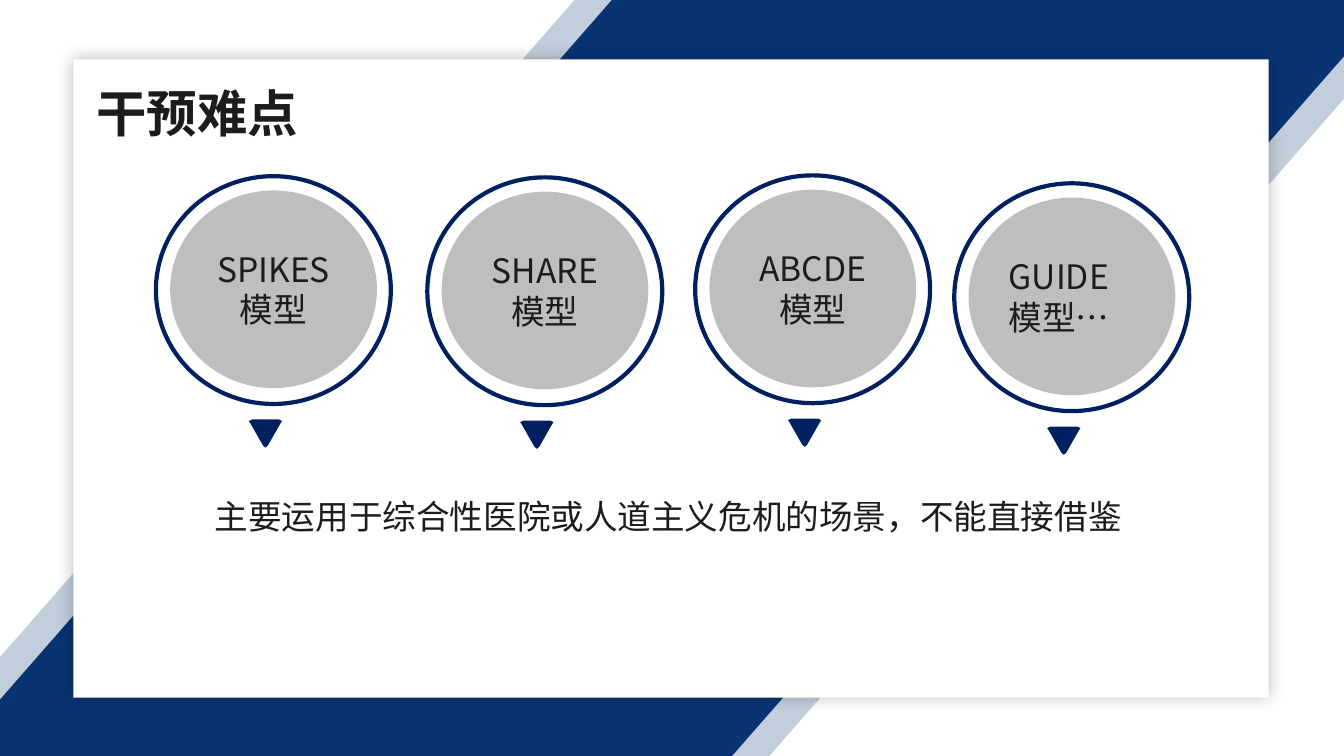
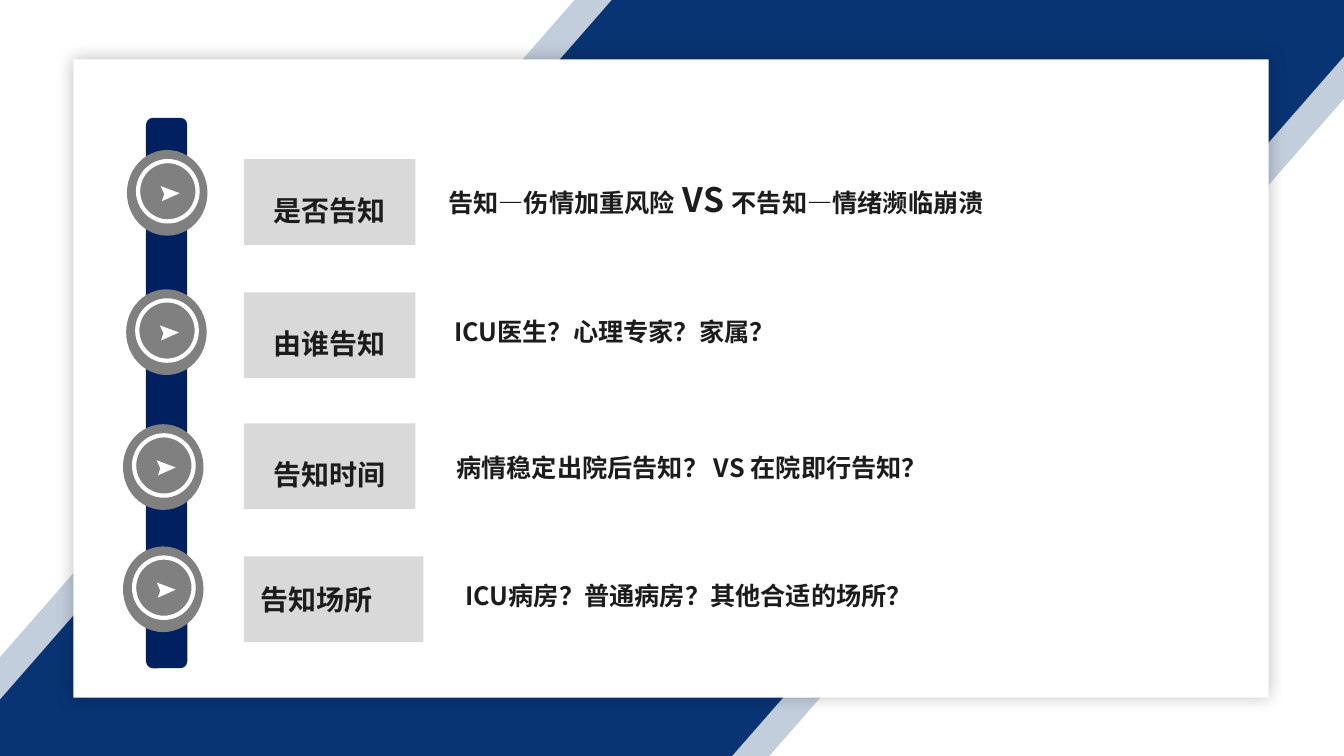
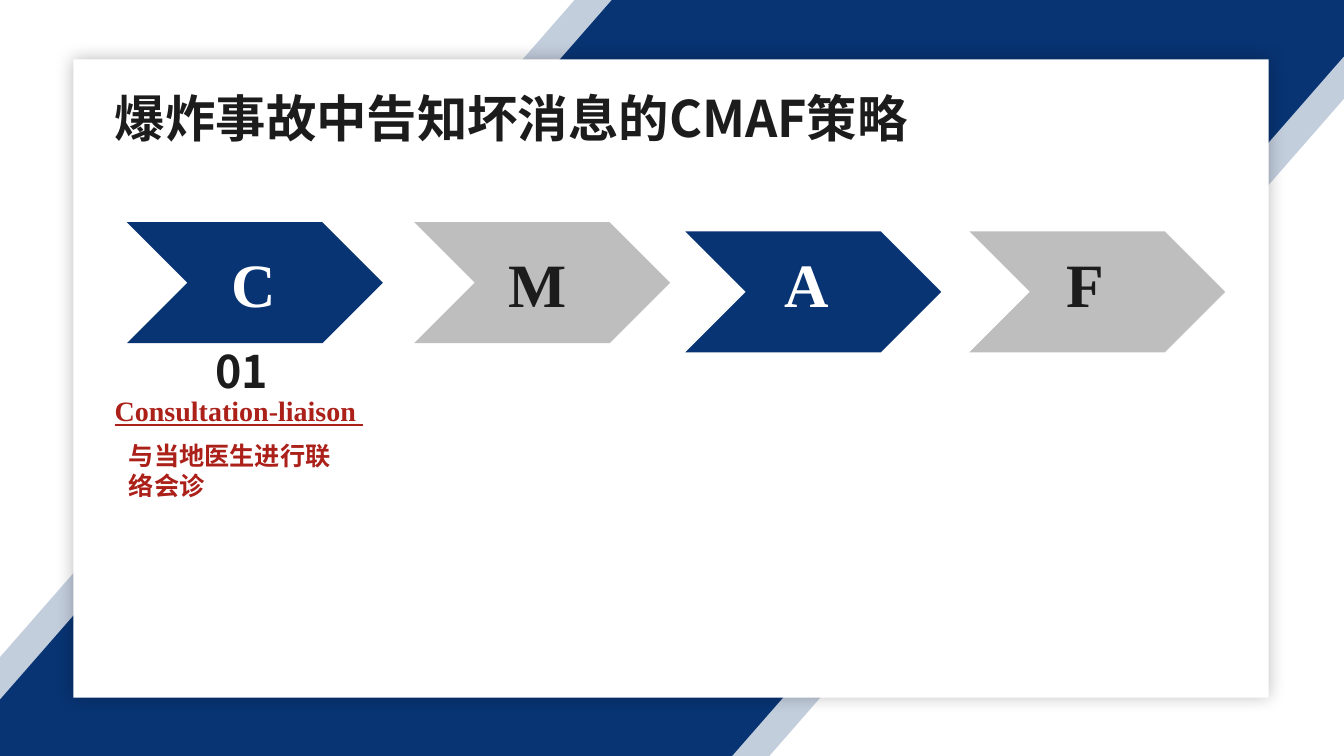
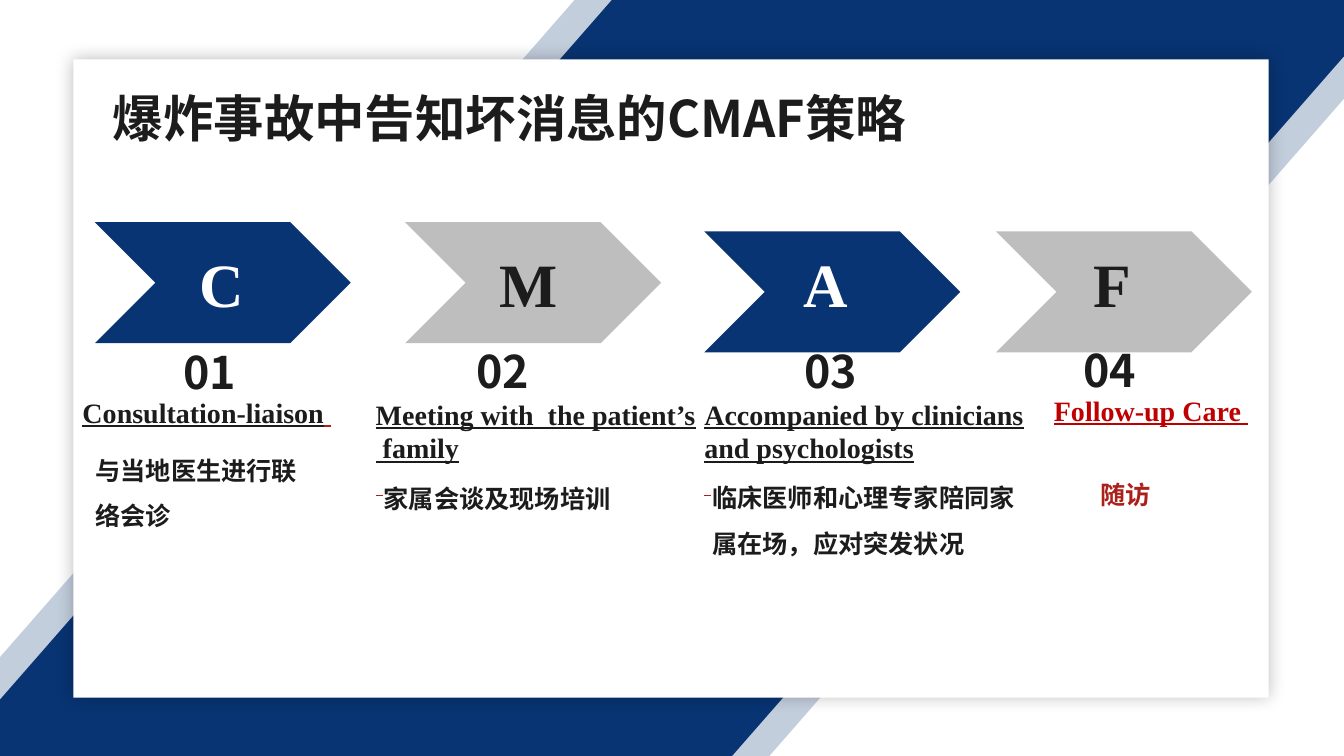
from lxml.etree import SubElement
from pptx import Presentation
from pptx.dml.color import RGBColor
from pptx.enum.shapes import MSO_SHAPE
from pptx.enum.text import MSO_ANCHOR, MSO_AUTO_SIZE, PP_ALIGN
from pptx.oxml.ns import qn
from pptx.util import Cm, Pt

WIDTH, HEIGHT = 33.87, 19.05
BLUE, NAVY, SILVER, GRAY, PALE = "083473", "002060", "BEBEBE", "808080", "D9D9D9"
WHITE, INK, RED, BRIGHT_RED = "FFFFFF", "1C1C1C", "AB2019", "C00000"

PLAIN = {"name": "Noto Sans CJK SC", "size": Pt(24), "color": INK}
BOLD = PLAIN | {"bold": True}
TITLE = BOLD | {"size": Pt(36)}
LABEL = BOLD | {"size": Pt(20)}
BODY = BOLD | {"size": Pt(18)}
NUMBER = BOLD | {"size": Pt(32)}
LETTER = BOLD | {"name": "Times New Roman", "size": Pt(44)}
HEADING = LETTER | {"size": Pt(20), "underline": True}


def add(slide, kind, left, top, width=0, height=0, fill=None, line=None):
    """Add a preset shape, a polygon (kind is a list of points) or a text box (kind is None), in cm."""
    box = [Cm(value) for value in (left, top, width, height)]
    if kind is None:
        return slide.shapes.add_textbox(*box)
    if isinstance(kind, list):
        points = [(Cm(left + x), Cm(top + y)) for x, y in kind]
        builder = slide.shapes.build_freeform(*points[0], scale=1.0)
        builder.add_line_segments(points[1:], close=True)
        shape = builder.convert_to_shape()
    else:
        shape = slide.shapes.add_shape(kind, *box)
    shape.shadow.inherit = False
    for target, color in ((shape.fill, fill), (shape.line.fill, line)):
        if color:
            target.solid()
            target.fore_color.rgb = RGBColor.from_string(color)
        else:
            target.background()
    if line:
        shape.line.width = Pt(3)
    return shape


def write(shape, runs, style, anchor=MSO_ANCHOR.TOP, **paragraph_format):
    """Write a string, or (text, style changes) pairs; a newline is a line break."""
    frame = shape.text_frame
    frame.word_wrap = True
    frame.auto_size = MSO_AUTO_SIZE.NONE
    frame.vertical_anchor = anchor
    paragraph = frame.paragraphs[0]
    for name, value in ({"alignment": PP_ALIGN.LEFT} | paragraph_format).items():
        setattr(paragraph, name, value)
    for text, changes in [(runs, {})] if isinstance(runs, str) else runs:
        for index, line in enumerate(text.split("\n")):
            if index:
                paragraph.add_line_break()
            if not line:
                continue
            run = paragraph.add_run()
            run.text = line
            for name, value in (style | changes).items():
                if name == "color":
                    run.font.color.rgb = RGBColor.from_string(value)
                else:
                    setattr(run.font, name, value)
            SubElement(run._r.get_or_add_rPr(), qn("a:ea"), typeface=style["name"])


presentation = Presentation()
presentation.slide_width, presentation.slide_height = Cm(WIDTH), Cm(HEIGHT)

# Slides and titles: text, left, top, width
titles = [
    ("干预难点", 2.18, 1.93, 7.06),
    None,
    ("爆炸事故中告知坏消息的CMAF策略", 2.64, 2.08, 21.44),
    ("爆炸事故中告知坏消息的CMAF策略", 2.59, 2.08, 20.9),
]
slides = []
for title in titles:
    slide = presentation.slides.add_slide(presentation.slide_layouts[5 if title else 6])
    slides.append(slide)
    if title:
        text, left, top, width = title
        shape = slide.shapes.title
        shape.left, shape.top, shape.width, shape.height = Cm(left), Cm(top), Cm(width), Cm(1.8)
        write(shape, text, TITLE)
models_slide, questions_slide, first_step_slide, all_steps_slide = slides

# Diagonal bands and white panel, moved to the master
backdrop = []
for top_x, side_y in ((14.48, 2.49), (15.42, 1.42)):
    outline = [(top_x, 0), (WIDTH, 0), (WIDTH, side_y),
               (WIDTH - top_x, HEIGHT), (0, HEIGHT), (0, HEIGHT - side_y)]
    backdrop.append(add(models_slide, outline, 0, 0, fill=BLUE))
pale_color = next(backdrop[0].element.spPr.iter(qn("a:srgbClr")))
SubElement(pale_color, qn("a:alpha"), val="24000")
panel = add(models_slide, MSO_SHAPE.RECTANGLE, 1.85, 1.5, 30.12, 16.08, WHITE)
effects = panel.element.spPr.find(qn("a:effectLst"))
shadow = SubElement(effects, qn("a:outerShdw"), blurRad=str(Pt(12)), dist="0", dir="0",
                    algn="ctr", rotWithShape="0")
shadow_color = SubElement(shadow, qn("a:srgbClr"), val="000000")
SubElement(shadow_color, qn("a:alpha"), val="25000")
for index, shape in enumerate(backdrop + [panel]):
    shape.element.nvSpPr.cNvPr.set("id", str(100 + index))
    presentation.slide_master.shapes.element.insert(2 + index, shape.element)

# Slide 1: four models
pointer = [(0.08, 0), (0.76, 0), (0.84, 0.04), (0.81, 0.08), (0.48, 0.66),
           (0.42, 0.71), (0.36, 0.66), (0.03, 0.08), (0, 0.04)]
models = [
    ("SPIKES模型", 4.29, 4.8, PP_ALIGN.CENTER),
    ("SHARE\n模型", 11.13, 4.83, PP_ALIGN.CENTER),
    ("ABCDE\n模型", 17.88, 4.78, PP_ALIGN.CENTER),
    ("GUIDE\n模型…", 24.41, 4.98, PP_ALIGN.LEFT),
]
for text, left, top, alignment in models:
    disc = add(models_slide, MSO_SHAPE.OVAL, left, top, 5.21, 4.98, SILVER)
    write(disc, text, PLAIN, MSO_ANCHOR.MIDDLE, alignment=alignment)
    add(models_slide, MSO_SHAPE.OVAL, left - 0.36, top - 0.36, 5.92, 5.74, line=NAVY)
    add(models_slide, pointer, left + 1.98, top + 5.77, fill=NAVY)
summary = add(models_slide, None, 5.16, 12.37, 23.6, 1.27)
write(summary, "主要运用于综合性医院或人道主义危机的场景，不能直接借鉴", PLAIN)

# Slide 2: four questions along a bar
add(questions_slide, MSO_SHAPE.ROUNDED_RECTANGLE, 3.68, 2.97, 1.04, 13.87, NAVY)
arrow = [(0.03, 0.38), (0.48, 0.18), (0, 0), (0.09, 0.2)]
centered = {"alignment": PP_ALIGN.CENTER, "line_spacing": 1.5}
# disc left, top; label, top, width, format; answer, left, top, width
questions = [
    (3.2, 3.78, "是否告知", 4.01, 4.32, centered,
     [("告知—伤情加重风险", {}), (" VS ", {"size": Pt(24)}), ("不告知—情绪濒临崩溃", {})],
     11.05, 4.39, 14.05),
    (3.18, 7.29, "由谁告知", 7.37, 4.32, centered,
     "ICU医生？心理专家？家属？", 11.2, 7.85, 9),
    (3.1, 10.69, "告知时间", 10.67, 4.32, centered,
     "病情稳定出院后告知？ VS 在院即行告知？", 11.25, 11.28, 13),
    (3.1, 13.77, "告知场所", 14.02, 4.52, {},
     "ICU病房？普通病房？其他合适的场所？", 11.48, 14.5, 12.2),
]
for (left, top, label, label_top, label_width, label_format,
     answer, answer_left, answer_top, answer_width) in questions:
    add(questions_slide, MSO_SHAPE.OVAL, left, top, 2.03, 2.16, GRAY)
    add(questions_slide, MSO_SHAPE.OVAL, left + 0.28, top + 0.28, 1.5, 1.52, line=WHITE)
    add(questions_slide, arrow, left + 0.85, top + 0.91, fill=WHITE)
    box = add(questions_slide, MSO_SHAPE.RECTANGLE, 6.15, label_top, label_width, 2.16, PALE)
    write(box, label, LABEL, MSO_ANCHOR.MIDDLE, **label_format)
    if not label_format:
        box.text_frame.margin_left = Cm(0.42)
    write(add(questions_slide, None, answer_left, answer_top, answer_width, 1.1), answer, BODY)

# Slides 3 and 4: CMAF chevrons
# letter, chevron top, letter offset, chevron colour, letter colour
steps = [
    ("C", 5.6, 2.39, BLUE, WHITE),
    ("M", 5.6, 2.13, SILVER, INK),
    ("A", 5.83, 2.24, BLUE, WHITE),
    ("F", 5.83, 2.21, SILVER, INK),
]
for slide, lefts in ((first_step_slide, (3.2, 10.44, 17.27, 24.43)),
                     (all_steps_slide, (2.39, 10.21, 17.75, 25.1))):
    for left, (letter, top, offset, fill, color) in zip(lefts, steps):
        add(slide, MSO_SHAPE.CHEVRON, left, top, 6.45, 3.05, fill)
        write(add(slide, None, left + offset, 6.06, 2.16, 2.13), letter, LETTER | {"color": color})

# number, left, top; heading, left, top, width; body, left, top, width, line spacing, colour
red, bright_red = {"color": RED}, {"color": BRIGHT_RED}
columns = [
    (first_step_slide, "01", 5.18, 8.53, [("Consultation-liaison ", red)], 2.64, 9.8, 9.53,
     "与当地医生进行联络会诊", 3, 10.97, 5.84, 1, RED),
    (all_steps_slide, "01", 4.37, 8.56, [("Consultation-liaison", {}), (" ", red)], 1.83, 9.83, 7.01,
     "与当地医生进行联络会诊", 2.16, 10.97, 5.84, 1.5, INK),
    (all_steps_slide, "02", 11.76, 8.53,
     [("Meeting with  the patient’s  family", {}), ("\n ", red)], 9.22, 9.88, 8.59,
     "家属会谈及现场培训", 9.42, 11.68, 7.24, 1.5, INK),
    (all_steps_slide, "03", 20.02, 8.53,
     [("Accompanied by clinicians and psychologists", {}), ("\n ", red)], 17.5, 9.88, 8.59,
     "临床医师和心理专家陪同家属在场，应对突发状况", 17.7, 11.66, 8.41, 1.5, INK),
    (all_steps_slide, "04", 27.05, 8.51, [("Follow-up Care ", bright_red)], 26.31, 9.78, 7.5,
     "随访", 27.48, 11.56, 2.34, 1.5, RED),
]
for (slide, number, number_left, number_top, heading, heading_left, heading_top, heading_width,
     body, body_left, body_top, body_width, spacing, color) in columns:
    write(add(slide, None, heading_left, heading_top, heading_width, 1.12), heading, HEADING)
    write(add(slide, None, number_left, number_top, 2.84, 1.63), number, NUMBER)
    write(add(slide, None, body_left, body_top, body_width, 1.8), body,
          BODY | {"color": color}, line_spacing=spacing)

presentation.save("out.pptx")
